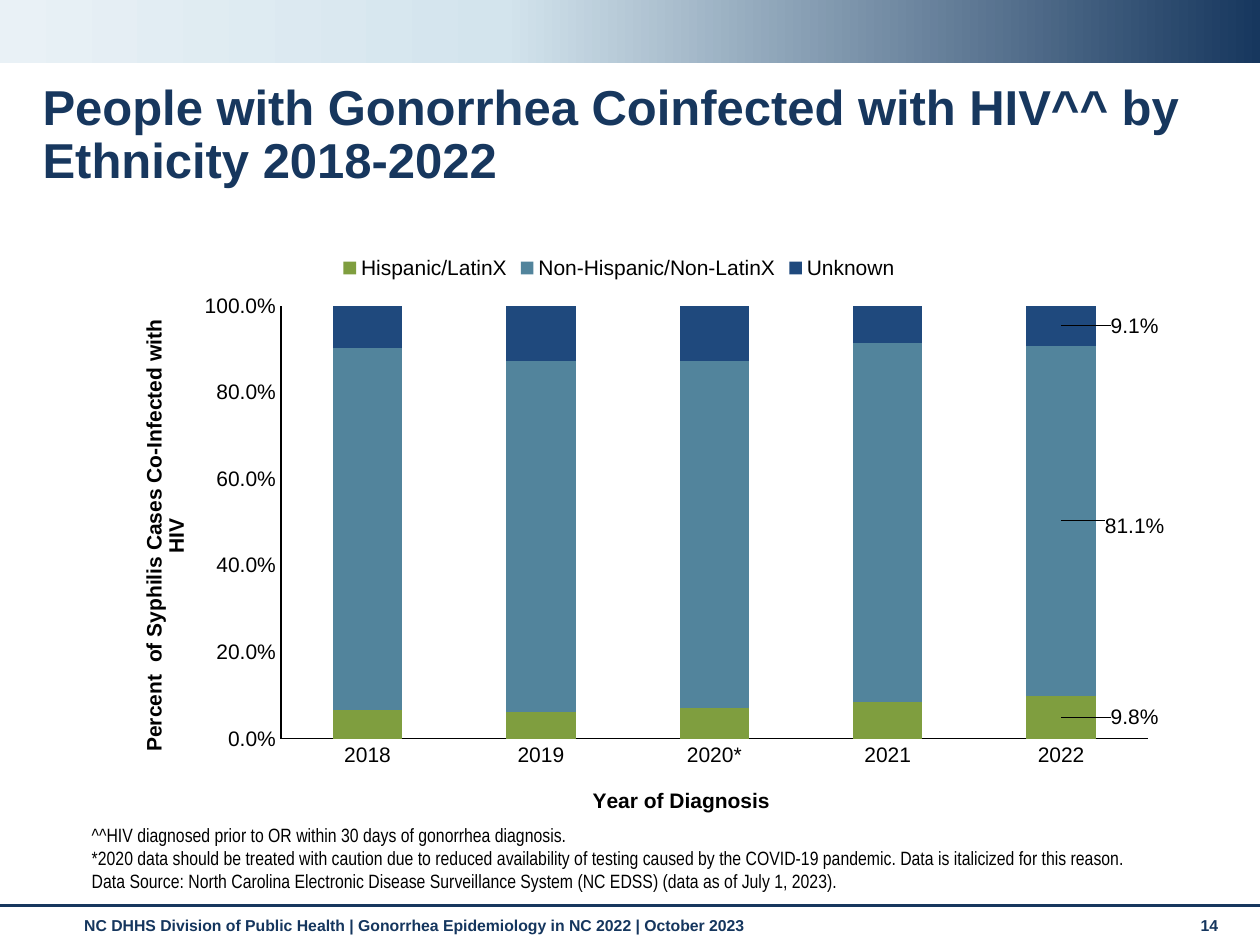
from copy import deepcopy
from dataclasses import dataclass

from lxml.etree import SubElement
from pptx import Presentation
from pptx.chart.data import CategoryChartData
from pptx.dml.color import RGBColor as RGB
from pptx.enum.chart import XL_CHART_TYPE as ChartType
from pptx.enum.chart import XL_LABEL_POSITION as LabelPos
from pptx.enum.chart import XL_LEGEND_POSITION as LegendPos
from pptx.enum.chart import XL_TICK_MARK as Tick
from pptx.enum.shapes import MSO_CONNECTOR as Connector
from pptx.enum.shapes import MSO_SHAPE as Shape
from pptx.enum.text import MSO_ANCHOR as Anchor
from pptx.oxml import parse_xml
from pptx.oxml.ns import qn
from pptx.util import Inches, Pt


@dataclass(frozen=True)
class Theme:
    navy: str = "17375E"
    footer_navy: str = "15365E"
    ink: str = "000000"
    band: tuple = ((0, "17375E"), (0.6, "D3E4ED"), (1, "E9F1F6"))
    series: tuple = ("7F9E3F", "52849C", "1F497D")
    sans: str = "Arial"
    narrow: str = "Arial Narrow"
    title: float = 28
    chart: float = 12
    note: float = 11
    footer: float = 9


@dataclass(frozen=True)
class Box:
    left: float
    top: float
    width: float
    height: float

    def inner(self, left, top, width, height):
        """Inner box, given in percent of this one."""
        return Box(self.left + self.width * left / 100,
                   self.top + self.height * top / 100,
                   self.width * width / 100, self.height * height / 100)

    def emu(self):
        return [Inches(v) for v in (self.left, self.top, self.width, self.height)]


THEME = Theme()
SLIDE = Box(0, 0, 10, 7.5)

YEARS = ("2018", "2019", "2020*", "2021", "2022")
# Ethnicity: shares by year, vertical shift of the last year's label
ETHNICITIES = {
    "Hispanic/LatinX": ((0.067, 0.062, 0.072, 0.086, 0.098), 0),
    "Non-Hispanic/Non-LatinX": ((0.836, 0.812, 0.802, 0.828, 0.811), 0.01),
    "Unknown": ((0.097, 0.126, 0.126, 0.086, 0.091), 0),
}
LABEL_SHIFT = 0.07
NOTES = (
    "^^HIV diagnosed prior to OR within 30 days of gonorrhea diagnosis.",
    "*2020 data should be treated with caution due to reduced availability of testing "
    "caused by the COVID-19 pandemic. Data is italicized for this reason.",
    "Data Source: North Carolina Electronic Disease Surveillance System (NC EDSS) "
    "(data as of July 1, 2023).",
)


def style(font, size, color=THEME.ink, bold=False, face=THEME.sans):
    font.name, font.size, font.bold = face, Pt(size), bold
    font.color.rgb = RGB.from_string(color)


def add_text(slide, box, lines, size, color, bold=True, face=THEME.sans,
             anchor=Anchor.TOP, spacing=None):
    frame = slide.shapes.add_textbox(*box.emu()).text_frame
    frame.word_wrap, frame.vertical_anchor = True, anchor
    frame.text = "\n".join(lines)
    for paragraph in frame.paragraphs:
        style(paragraph.font, size, color, bold, face)
        paragraph.line_spacing = spacing


def add_band(slide, box):
    band = slide.shapes.add_shape(Shape.RECTANGLE, *box.emu())
    band.shadow.inherit = False
    band.line.fill.background()
    band.fill.gradient()
    band.fill.gradient_angle = 180
    # The default gradient has two stops; add one for the third colour
    stop_list = band._element.spPr.find(".//" + qn("a:gsLst"))
    stop_list.append(deepcopy(stop_list[0]))
    for stop, (position, color) in zip(band.fill.gradient_stops, THEME.band):
        stop.position = position
        stop.color.rgb = RGB.from_string(color)


def layout_xml(**settings):
    """Manual chart layout; settings are child names and their values."""
    children = "".join(f'<c:{k} val="{v}"/>' for k, v in settings.items())
    return parse_xml(
        '<c:layout xmlns:c="http://schemas.openxmlformats.org/drawingml/2006/chart">'
        f"<c:manualLayout>{children}</c:manualLayout></c:layout>")


def set_layout(parent, index, **settings):
    for old in parent.findall(qn("c:layout")):
        parent.remove(old)
    parent.insert(index, layout_xml(**settings))


def style_axis(axis, title, x, y):
    axis.has_major_gridlines = False
    axis.major_tick_mark = axis.minor_tick_mark = Tick.NONE
    axis.format.line.color.rgb = RGB.from_string(THEME.ink)
    axis.format.line.width = Pt(0.75)
    style(axis.tick_labels.font, THEME.chart)
    frame = axis.axis_title.text_frame
    frame.text = title
    style(frame.paragraphs[0].font, THEME.chart, bold=True)
    set_layout(axis.axis_title._element, 1, xMode="edge", yMode="edge", x=x, y=y)


def add_ethnicity_chart(slide, box):
    data = CategoryChartData(number_format="0.0%")
    data.categories = YEARS
    for name, (shares, _) in ETHNICITIES.items():
        data.add_series(name, shares)
    chart = slide.shapes.add_chart(ChartType.COLUMN_STACKED, *box.emu(), data).chart
    chart.has_title = False
    style(chart.font, THEME.chart)
    set_layout(chart._chartSpace.chart.plotArea, 0, layoutTarget="inner",
               xMode="edge", yMode="edge", x=0.157, y=0.123, w=0.825, h=0.74)

    # Legend
    chart.has_legend = True
    chart.legend.position = LegendPos.TOP
    chart.legend.include_in_layout = False
    style(chart.legend.font, THEME.chart)
    set_layout(chart.legend._element, 1, xMode="edge", yMode="edge", x=0.21, y=0.03)

    # Axes
    shares_axis = chart.value_axis
    shares_axis.minimum_scale, shares_axis.maximum_scale = 0, 1
    shares_axis.major_unit = 0.2
    shares_axis.tick_labels.number_format = "0.0%"
    shares_axis.tick_labels.number_format_is_linked = False
    style_axis(shares_axis, "Percent  of Syphilis Cases Co-Infected with HIV", 0.02, 0.14)
    style_axis(chart.category_axis, "Year of Diagnosis", 0.45, 0.94)

    # Columns, with only the last year labelled, to the right of its column
    plot = chart.plots[0]
    plot.gap_width, plot.overlap, plot.vary_by_categories = 150, 100, False
    shifts = (shift for _, shift in ETHNICITIES.values())
    for series, color, shift in zip(plot.series, THEME.series, shifts):
        series.format.fill.solid()
        series.format.fill.fore_color.rgb = RGB.from_string(color)
        series.data_labels.show_value = False
        label = series.points[len(YEARS) - 1].data_label
        style(label.font, THEME.chart)
        label.position = LabelPos.CENTER
        set_layout(series.data_labels._element.find(qn("c:dLbl")), 1,
                   x=LABEL_SHIFT, y=shift)


def add_footer(slide, box):
    left, top, width, _ = box.emu()
    rule = slide.shapes.add_connector(Connector.STRAIGHT, left, top, left + width, top)
    rule.line.color.rgb = RGB.from_string(THEME.navy)
    rule.line.width = Pt(1.75)
    SubElement(rule._element.spPr, qn("a:effectLst"))
    credit = "NC DHHS Division of Public Health | Gonorrhea Epidemiology in NC 2022 | October 2023"
    for area, words in ((box.inner(5.7, 10, 87.4, 90), credit),
                        (box.inner(94.3, 10, 4.4, 90), "14")):
        add_text(slide, area, [words], THEME.footer, THEME.footer_navy)


def main():
    deck = Presentation()
    deck.slide_width, deck.slide_height = Inches(SLIDE.width), Inches(SLIDE.height)
    slide = deck.slides.add_slide(deck.slide_layouts[6])
    add_footer(slide, SLIDE.inner(0, 95.87, 100, 4.13))
    add_band(slide, SLIDE.inner(0, 0, 100, 6.67))
    add_text(slide, SLIDE.inner(2.4, 8.13, 97, 8),
             ["People with Gonorrhea Coinfected with HIV^^ by Ethnicity 2018-2022"],
             THEME.title, THEME.navy, spacing=0.9)
    add_text(slide, SLIDE.inner(6.3, 86.67, 87.4, 8.4), NOTES, THEME.note, THEME.ink,
             bold=False, face=THEME.narrow, anchor=Anchor.BOTTOM)
    add_ethnicity_chart(slide, SLIDE.inner(9.2, 24.8, 83.4, 61.87))
    deck.save("out.pptx")


if __name__ == "__main__":
    main()
